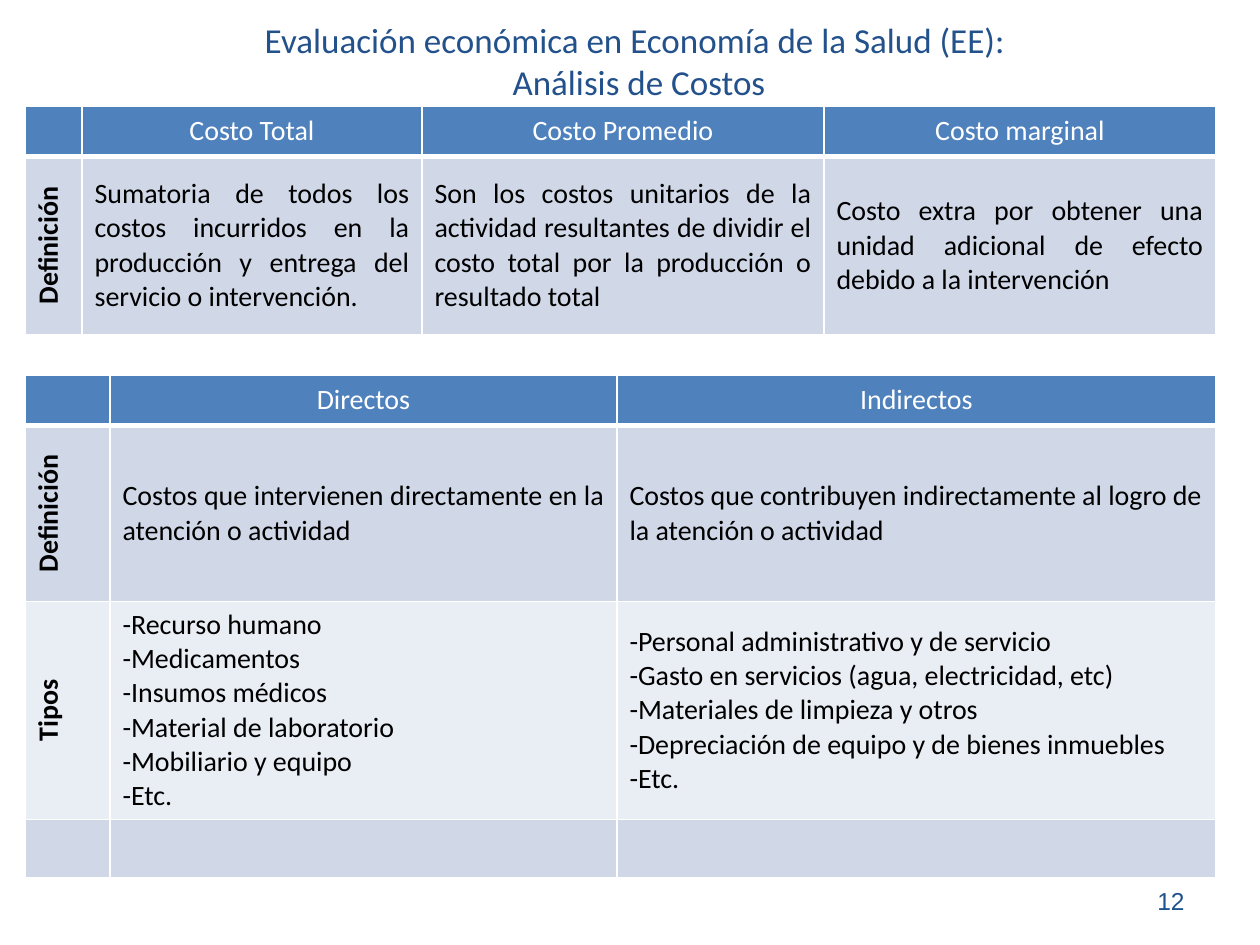
from lxml import etree
from pptx import Presentation
from pptx import util as u
from pptx.dml.color import RGBColor
from pptx.enum import text
from pptx.oxml.ns import qn

PX = 914400 // 126
WHITE = RGBColor(0xFF, 0xFF, 0xFF)
BLACK = RGBColor(0x00, 0x00, 0x00)
TITLE_BLUE = RGBColor(0x23, 0x51, 0x8B)
NUMBER_BLUE = RGBColor(0x1D, 0x52, 0x8D)
HEADER_BLUE = RGBColor(0x4F, 0x81, 0xBD)
BANDS = [RGBColor(0xE9, 0xED, 0xF4), RGBColor(0xD0, 0xD8, 0xE8)]
LEFT, CENTER = text.PP_ALIGN.LEFT, text.PP_ALIGN.CENTER
RIGHT, JUSTIFY = text.PP_ALIGN.RIGHT, text.PP_ALIGN.JUSTIFY


def add_run(p, words, size, color, font="Calibri", bold=False):
    r = p.add_run()
    r.text = words
    r.font.name = font
    r.font.size = u.Pt(size)
    r.font.bold = bold
    r.font.color.rgb = color


def add_borders(cell, row):
    """White cell edges, with a thicker line under the header row."""
    widths = {"L": 1, "R": 1, "T": 3 if row == 1 else 1, "B": 3 if row == 0 else 1}
    props = cell._tc.get_or_add_tcPr()
    for side, width in widths.items():
        line = etree.SubElement(props, qn(f"a:ln{side}"), w=str(u.Pt(width)))
        fill = etree.SubElement(line, qn("a:solidFill"))
        etree.SubElement(fill, qn("a:srgbClr"), val=str(WHITE))


prs = Presentation()
prs.slide_width, prs.slide_height = u.Inches(10), u.Inches(7.5)
s = prs.slides.add_slide(prs.slide_layouts[6])

# Title
sp = s.shapes.add_textbox(143 * PX, 0, 992 * PX, 120 * PX)
tf = sp.text_frame
tf.word_wrap = True
tf.vertical_anchor = text.MSO_ANCHOR.MIDDLE
p = tf.paragraphs[0]
p.alignment = CENTER
add_run(p, "Evaluación económica en Economía de la Salud (EE): ", 20, TITLE_BLUE)
p.add_line_break()
add_run(p, "Análisis de Costos", 20, TITLE_BLUE)

# Tables: top, column widths, row heights, body alignments, rows
cost_measures = (
    106, [57, 340, 402, 392], [49, 178], {(1, 1): JUSTIFY, (1, 2): JUSTIFY, (1, 3): JUSTIFY},
    [
        ["", "Costo Total", "Costo Promedio", "Costo marginal"],
        [
            "Definición",
            "Sumatoria de todos los costos incurridos en la producción y entrega "
            "del servicio o intervención.",
            "Son los costos unitarios de la actividad resultantes de dividir el "
            "costo total por la producción o resultado total",
            "Costo extra por obtener una unidad adicional de efecto debido a la "
            "intervención",
        ],
    ],
)
cost_types = (
    375, [85, 507, 599], [48, 176, 218, 58], {(1, 1): JUSTIFY},
    [
        ["", "Directos", "Indirectos"],
        [
            "Definición",
            "Costos que intervienen directamente en la atención o actividad ",
            "Costos que contribuyen indirectamente al logro de la atención o actividad",
        ],
        [
            "Tipos",
            "-Recurso humano\n-Medicamentos\n-Insumos médicos\n"
            "-Material de laboratorio\n-Mobiliario y equipo\n-Etc.",
            "-Personal administrativo y de servicio\n"
            "-Gasto en servicios (agua, electricidad, etc)\n"
            "-Materiales de limpieza y otros\n"
            "-Depreciación de equipo y de bienes inmuebles\n-Etc.",
        ],
        ["", "", ""],
    ],
)

for top, widths, heights, alignments, rows in (cost_measures, cost_types):
    table = s.shapes.add_table(len(heights), len(widths), 25 * PX, top * PX,
                               sum(widths) * PX, sum(heights) * PX).table
    for column, width in zip(table.columns, widths):
        column.width = width * PX
    for table_row, height in zip(table.rows, heights):
        table_row.height = height * PX
    for i, row in enumerate(rows):
        for j, words in enumerate(row):
            cell = table.cell(i, j)
            header, label = i == 0, i > 0 and j == 0
            add_borders(cell, i)
            cell.fill.solid()
            cell.fill.fore_color.rgb = HEADER_BLUE if header else BANDS[i % 2]
            cell.vertical_anchor = text.MSO_ANCHOR.MIDDLE
            if label and words:
                cell._tc.get_or_add_tcPr().set("vert", "vert270")
            tf = cell.text_frame
            for n, line in enumerate(words.split("\n")):
                p = tf.add_paragraph() if n else tf.paragraphs[0]
                p.alignment = CENTER if header or label else alignments.get((i, j), LEFT)
                add_run(p, line, 16, WHITE if header else BLACK, bold=label)

# Slide number
sp = s.shapes.add_textbox(903 * PX, 876 * PX, 294 * PX, 50 * PX)
tf = sp.text_frame
tf.word_wrap = True
tf.vertical_anchor = text.MSO_ANCHOR.MIDDLE
p = tf.paragraphs[0]
p.alignment = RIGHT
add_run(p, "12", 14, NUMBER_BLUE, font="Arial")

prs.save("out.pptx")
